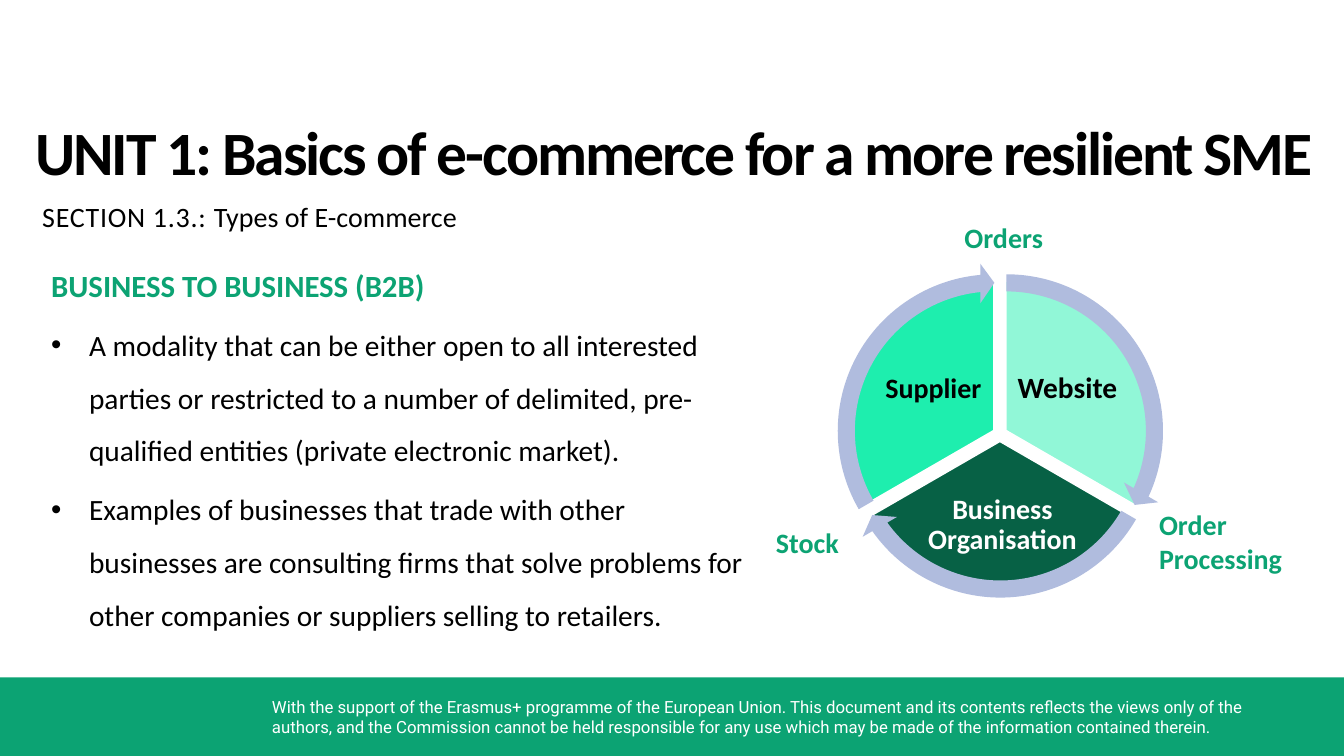
from lxml.etree import SubElement
from pptx import Presentation
from pptx.dml.color import RGBColor
from pptx.enum.shapes import MSO_SHAPE as Preset
from pptx.enum.text import MSO_ANCHOR as Anchor, MSO_AUTO_SIZE as AutoSize, PP_ALIGN as Align
from pptx.oxml.ns import qn
from pptx.util import Pt

# Content
TITLE = "UNIT 1: Basics of e-commerce for a more resilient SME"
SECTION = [("SECTION 1.3.: ", 0.5), ("Types of E-commerce", 0)]
HEADING = "BUSINESS TO BUSINESS (B2B)"
BULLETS = [
    "A modality that can be either open to all interested parties or restricted to a number of "
    "delimited, pre-qualified entities (private electronic market).",
    "Examples of businesses that trade with other businesses are consulting firms that solve "
    "problems for other companies or suppliers selling to retailers.",
]
FOOTER = (
    "With the support of the Erasmus+ programme of the European Union. This document and its "
    "contents reflects the views only of the authors, and the Commission cannot be held "
    "responsible for any use which may be made of the information contained therein."
)
# Label, size, fill, text colour, wedge left and top, label box
WEDGES = [
    ("Website", 21, "mint", "black", (612, 200.9), (724.3, 246.2, 76.3, 63.4)),
    ("Business Organisation", 20, "forest", "white", (607.7, 208.8), (658.8, 347, 114.5, 56.2)),
    ("Supplier", 20, "aqua", "black", (603.4, 200.9), (628.6, 246.2, 76.3, 63.4)),
]
# Left, top, end angle and start angle in degrees
ARROWS = [
    (599, 187.9, 24.54, 269.99),
    (594.7, 195.1, 144.53, 30.01),
    (590.4, 187.9, 264.55, 150),
]
FLOWS = [
    ("Stock", (547.2, 371.5, 64.8, 31.7)),
    ("Order Processing", (820.8, 359.3, 109.4, 55.4)),
    ("Orders", (681.8, 154.1, 71.3, 31.7)),
]
COLORS = {
    "green": "0CA373", "mint": "91F7D7", "forest": "076145", "aqua": "1EEEAE",
    "arrow": "B0BCDE", "black": "000000", "white": "FFFFFF",
}

WIDTH, HEIGHT = 960, 540
FOOTER_TOP = 483.9
WEDGE_SIZE, ARROW_SIZE = 213.1, 239.8
WEDGE_SWEEP = 120
UNITS_PER_DEGREE = 0.6  # adjustments count 60000ths of a degree, divided by 100000


def color(name):
    return RGBColor.from_string(COLORS[name])


def add_run(paragraph, text, size=20, ink="black", bold=False, font="Calibri", spacing=0):
    run = paragraph.add_run()
    run.text = text
    if spacing:
        run._r.get_or_add_rPr().set("spc", str(round(spacing * 100)))
    run.font.name, run.font.size, run.font.bold = font, Pt(size), bold
    run.font.color.rgb = color(ink)


def set_frame(shape, insets=(7.2, 3.6, 7.2, 3.6), anchor=Anchor.TOP):
    frame = shape.text_frame
    frame.word_wrap = True
    frame.auto_size = AutoSize.NONE
    frame.vertical_anchor = anchor
    (frame.margin_left, frame.margin_top,
     frame.margin_right, frame.margin_bottom) = map(Pt, insets)
    return frame


def add_text(box, text, align=Align.LEFT, line_spacing=None, insets=(7.2, 3.6, 7.2, 3.6),
             anchor=Anchor.TOP, **style):
    shape = slide.shapes.add_textbox(*map(Pt, box))
    frame = set_frame(shape, insets, anchor)
    paragraph = frame.paragraphs[0]
    paragraph.alignment, paragraph.line_spacing = align, line_spacing
    add_run(paragraph, text, **style)
    return frame


def add_preset(preset, box, fill, adjustments=(), outline=None):
    shape = slide.shapes.add_shape(preset, *map(Pt, box))
    shape.shadow.inherit = False
    shape.fill.solid()
    shape.fill.fore_color.rgb = color(fill)
    if outline:
        shape.line.color.rgb = color(outline)
        shape.line.width = Pt(1)
    else:
        shape.line.fill.background()
    for index, value in enumerate(adjustments):
        shape.adjustments[index] = value


presentation = Presentation()
presentation.slide_width, presentation.slide_height = Pt(WIDTH), Pt(HEIGHT)
slide = presentation.slides.add_slide(presentation.slide_layouts[5])

# Footer band
add_preset(Preset.RECTANGLE, (0, FOOTER_TOP, WIDTH, HEIGHT - FOOTER_TOP), "green")
add_text((187.2, 493.9, 750.2, 36), FOOTER, size=12, ink="white", font="Roboto")

# Title and section
title = slide.shapes.title
title.left, title.top, title.width, title.height = map(Pt, (25.2, 80.6, 927.4, 54))
title_paragraph = set_frame(title, (0, 0.7, 0, 0)).paragraphs[0]
title_paragraph.alignment = Align.LEFT
add_run(title_paragraph, TITLE, size=44, bold=True, spacing=-1.5)

(section_label, label_spacing), (section_name, name_spacing) = SECTION
section = add_text((30.2, 141.1, 316.8, 25.2), section_label, insets=(0, 1.4, 0, 0),
                   spacing=label_spacing)
add_run(section.paragraphs[0], section_name, spacing=name_spacing)

# Heading and bullets
body = add_text((29.5, 173.5, 509, 285.8), HEADING, line_spacing=1.5,
                size=22, ink="green", bold=True)
for bullet in BULLETS:
    paragraph = body.add_paragraph()
    properties = paragraph._p.get_or_add_pPr()
    properties.set("marL", str(Pt(27)))
    properties.set("indent", str(-Pt(27)))
    paragraph.line_spacing, paragraph.space_before = 1.5, Pt(4.2)
    SubElement(properties, qn("a:buFont"), typeface="Arial")
    SubElement(properties, qn("a:buChar"), char="•")
    add_run(paragraph, bullet, size=21)

# Cycle wedges, clockwise from the top
for index, (label, size, fill, ink, corner, label_box) in enumerate(WEDGES):
    start = (270 + index * WEDGE_SWEEP) % 360
    end = (start + WEDGE_SWEEP) % 360
    add_preset(Preset.PIE, (*corner, WEDGE_SIZE, WEDGE_SIZE), fill,
               (start * UNITS_PER_DEGREE, end * UNITS_PER_DEGREE), outline="white")
    add_text(label_box, label, align=Align.CENTER, line_spacing=0.9, insets=(2.2,) * 4,
             anchor=Anchor.MIDDLE, size=size, ink=ink, bold=True)

# Arrows around the cycle
for left, top, end, start in ARROWS:
    add_preset(Preset.CIRCULAR_ARROW, (left, top, ARROW_SIZE, ARROW_SIZE), "arrow",
               (0.051, 3.275, end * UNITS_PER_DEGREE, start * UNITS_PER_DEGREE, 0.059))

# Flow labels
for label, box in FLOWS:
    add_text(box, label, ink="green", bold=True)

presentation.save("out.pptx")
